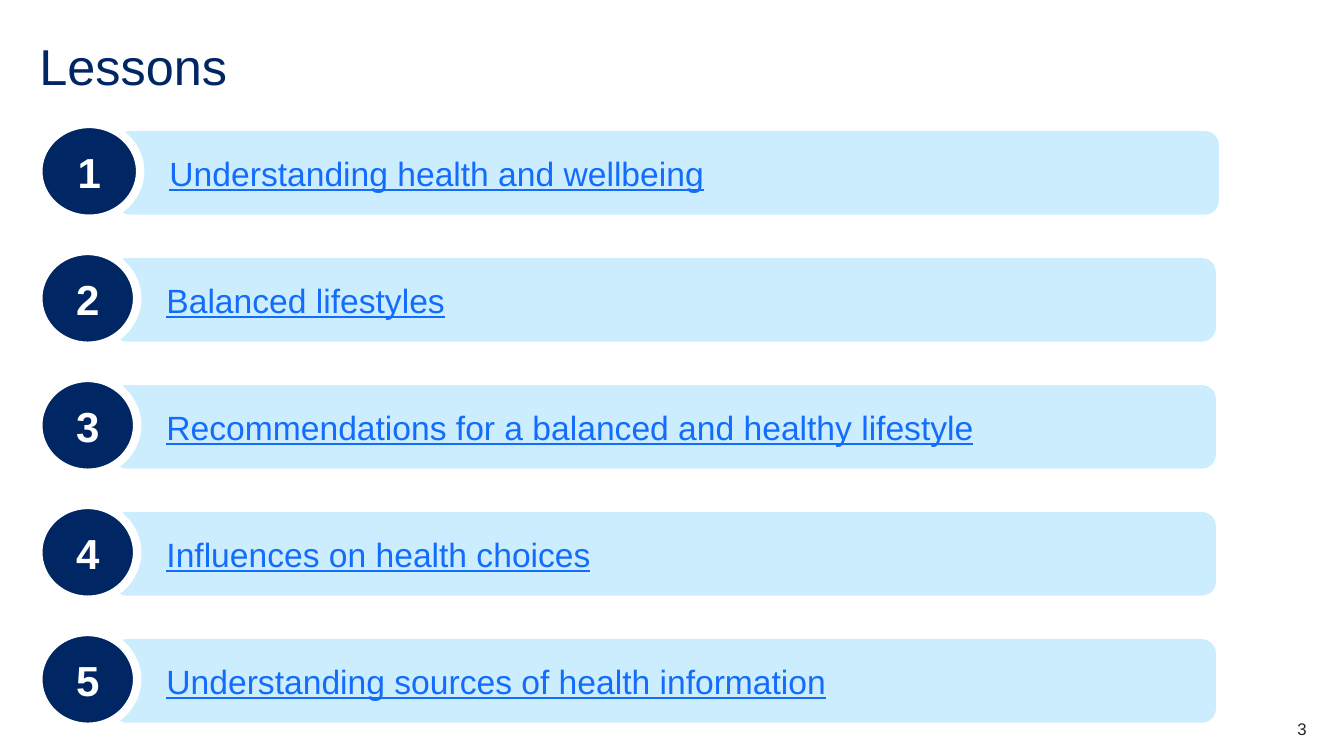
from pptx import Presentation
from pptx.dml.color import RGBColor
from pptx.enum.shapes import MSO_SHAPE
from pptx.enum.text import MSO_ANCHOR, PP_ALIGN
from pptx.util import Inches, Pt

TITLE = "Lessons"
LESSONS = [
    "Understanding health and wellbeing",
    "Balanced lifestyles",
    "Recommendations for a balanced and healthy lifestyle",
    "Influences on health choices",
    "Understanding sources of health information",
]
PAGE = "3"
NAVY, SKY, BLUE, WHITE, INK = "002664", "CBEDFD", "146CFD", "FFFFFF", "22272B"

# Layout in inches
LEFT, TOP, STEP = 0.38, 1.23, 1.26
DISC_H, BAR_W, BAR_H = 0.94, 10.94, 0.83
BAR_DROP, OVERLAP = 0.07, 0.24


def color(code):
    return RGBColor.from_string(code)


def place(shape, *box):
    shape.left, shape.top, shape.width, shape.height = map(Inches, box)


def write(shape, text, size, ink, align=PP_ALIGN.LEFT, anchor=MSO_ANCHOR.MIDDLE):
    frame = shape.text_frame
    frame.text = text
    frame.word_wrap = True
    frame.vertical_anchor = anchor
    para = frame.paragraphs[0]
    para.alignment = align
    font = para.font
    font.name, font.size = "Arial", Pt(size)
    font.color.rgb = color(ink)
    return para


def trim(shape):
    frame = shape.text_frame
    frame.margin_left = frame.margin_right = 0
    frame.margin_top = frame.margin_bottom = 0


def draw(group, kind, fill, *box):
    shape = group.shapes.add_shape(kind, *map(Inches, box))
    shape.shadow.inherit = False
    shape.fill.solid()
    shape.fill.fore_color.rgb = color(fill)
    return shape


deck = Presentation()
deck.slide_width, deck.slide_height = Inches(13.33), Inches(7.5)
slide = deck.slides.add_slide(deck.slide_layouts[5])

# Title
title = slide.shapes.title
place(title, 0.39, 0.39, 12.56, 0.6)
trim(title)
write(title, TITLE, 36, NAVY).line_spacing = 0.9

# Numbered lessons: a bar with a disc over its left end
for i, name in enumerate(LESSONS):
    top = TOP + i * STEP
    disc_w = 1.01 if i == 0 else 0.98
    group = slide.shapes.add_group_shape()

    bar = draw(group, MSO_SHAPE.ROUNDED_RECTANGLE, SKY,
               LEFT + disc_w - OVERLAP, top + BAR_DROP, BAR_W, BAR_H)
    bar.adjustments[0] = 0.17
    bar.line.fill.background()
    bar.text_frame.margin_left = Inches(0.49)
    write(bar, name, 24, BLUE).font.underline = True

    disc = draw(group, MSO_SHAPE.OVAL, NAVY, LEFT, top, disc_w, DISC_H)
    disc.line.color.rgb = color(WHITE)
    disc.line.width = Pt(6)
    write(disc, str(i + 1), 30, WHITE, PP_ALIGN.CENTER).font.bold = True

# Page number
page = slide.shapes.add_textbox(*map(Inches, (12.17, 7.13, 0.79, 0.2)))
trim(page)
write(page, PAGE, 12, INK, PP_ALIGN.RIGHT, MSO_ANCHOR.TOP)

deck.save("out.pptx")
